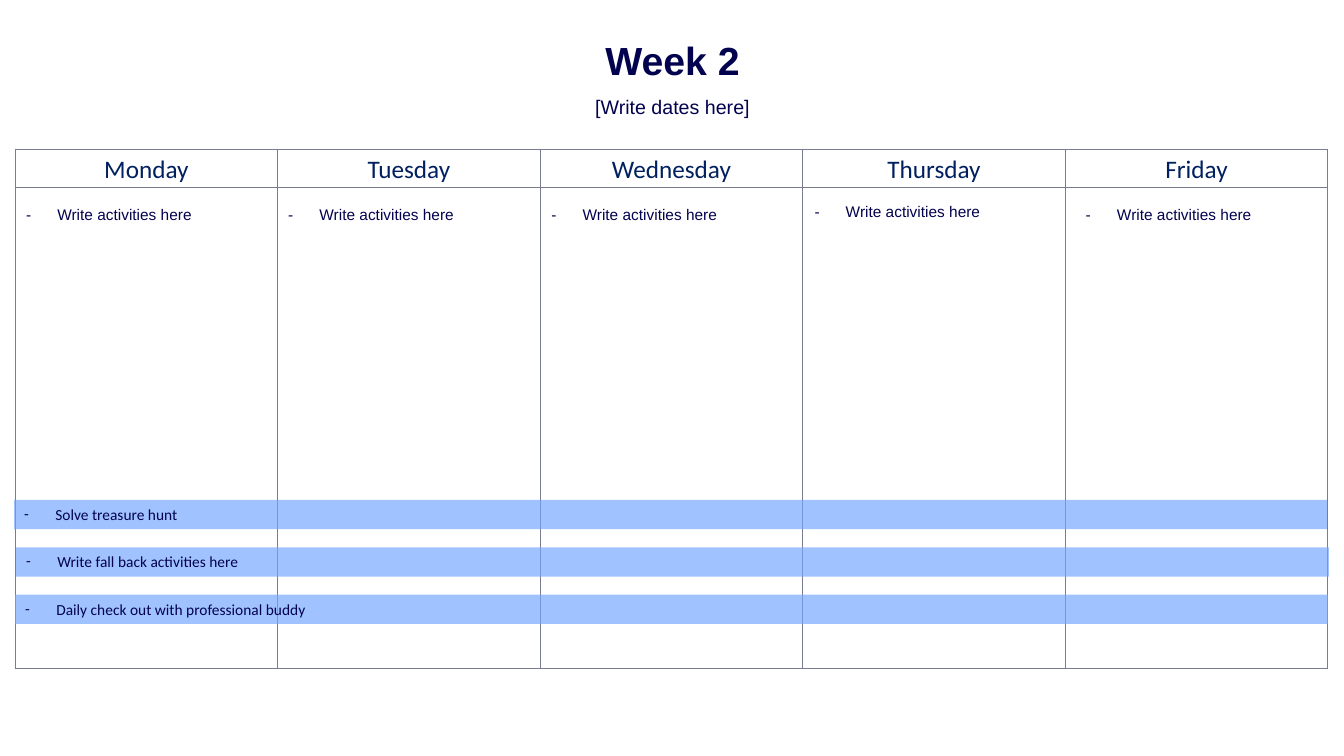
from lxml.etree import SubElement
from pptx import Presentation
from pptx.dml.color import RGBColor
from pptx.enum.shapes import MSO_CONNECTOR, MSO_SHAPE
from pptx.enum.text import MSO_ANCHOR, MSO_AUTO_SIZE, PP_ALIGN
from pptx.oxml.ns import qn
from pptx.util import Inches, Pt

COLORS = {"ink": "03024E", "heading": "002060", "grid": "797C91", "band": "73A6FF"}
DAYS = ["Monday", "Tuesday", "Wednesday", "Thursday", "Friday"]
# Left and top of each day's activity box
ACTIVITY_SPOTS = [(0.16, 1.99), (2.76, 1.99), (5.37, 1.99), (7.98, 1.96), (10.67, 1.99)]
BANDS = [
    ("Solve treasure hunt", 0.14, 4.96),
    ("Write fall back activities here", 0.16, 5.43),
    ("Daily check out with professional buddy", 0.15, 5.9),
]
GRID_LEFT, GRID_TOP, GRID_WIDTH, GRID_HEIGHT = 0.15, 1.48, 13.02, 5.15
HEADER_LINE_TOP = 1.86
ITEM_HEIGHT = 0.29


def rgb(name):
    return RGBColor.from_string(COLORS[name])


def format_runs(paragraph, size, font_name, color, bold=False):
    for run in paragraph.runs:
        run.font.size = Pt(size)
        run.font.name = font_name
        run.font.bold = bold
        run.font.color.rgb = rgb(color)


def add_title(slide):
    title = slide.shapes.title
    title.left, title.top = Inches(0.92), Inches(0.07)
    title.width, title.height = Inches(11.5), Inches(1.16)
    frame = title.text_frame
    frame.text = "Week 2\n[Write dates here]"
    frame.word_wrap = True
    frame.auto_size = MSO_AUTO_SIZE.NONE
    frame.vertical_anchor = MSO_ANCHOR.MIDDLE
    for paragraph, size, bold in zip(frame.paragraphs, (28, 14), (True, False)):
        paragraph.alignment = PP_ALIGN.CENTER
        paragraph.line_spacing = 1.5
        format_runs(paragraph, size, "Arial", "ink", bold)


def add_cell_borders(cell):
    properties = cell._tc.get_or_add_tcPr()
    for side in ("a:lnL", "a:lnR", "a:lnT", "a:lnB"):
        border = SubElement(properties, qn(side), w=str(Pt(1)))
        fill = SubElement(border, qn("a:solidFill"))
        SubElement(fill, qn("a:srgbClr"), val=COLORS["grid"])


def add_week_grid(slide):
    week = slide.shapes.add_table(
        1, len(DAYS), Inches(GRID_LEFT), Inches(GRID_TOP),
        Inches(GRID_WIDTH), Inches(GRID_HEIGHT),
    ).table
    week.first_row = week.horz_banding = False
    for cell, day in zip(week.rows[0].cells, DAYS):
        cell.text_frame.text = day
        heading = cell.text_frame.paragraphs[0]
        heading.alignment = PP_ALIGN.CENTER
        format_runs(heading, 18, "Calibri", "heading")
        add_cell_borders(cell)
        cell.fill.background()


def add_header_line(slide):
    line = slide.shapes.add_connector(
        MSO_CONNECTOR.STRAIGHT, Inches(GRID_LEFT), Inches(HEADER_LINE_TOP),
        Inches(GRID_LEFT + GRID_WIDTH), Inches(HEADER_LINE_TOP),
    )
    line.line.color.rgb = rgb("grid")
    line.line.width = Pt(0.75)
    SubElement(line._element.spPr, qn("a:effectLst"))


def write_dash_item(frame, text, font_name):
    frame.text = text
    frame.word_wrap = True
    frame.auto_size = MSO_AUTO_SIZE.SHAPE_TO_FIT_TEXT
    frame.vertical_anchor = MSO_ANCHOR.TOP
    item = frame.paragraphs[0]
    item.alignment = PP_ALIGN.LEFT
    item.space_before = Pt(12)
    format_runs(item, 11, font_name, "ink")
    properties = item._p.get_or_add_pPr()
    properties.set("marL", str(Inches(0.31)))
    properties.set("indent", str(-Inches(0.31)))
    SubElement(properties, qn("a:buFont"), typeface=font_name)
    SubElement(properties, qn("a:buChar"), char="-")


def add_activity(slide, left, top):
    activity = slide.shapes.add_textbox(
        Inches(left), Inches(top), Inches(2.61), Inches(ITEM_HEIGHT))
    write_dash_item(activity.text_frame, "Write activities here", "Arial")


def add_band(slide, text, left, top):
    """Add a translucent bar for an activity that spans the whole week."""
    band = slide.shapes.add_shape(
        MSO_SHAPE.RECTANGLE, Inches(left), Inches(top),
        Inches(GRID_WIDTH), Inches(ITEM_HEIGHT))
    band.shadow.inherit = False
    band.line.fill.background()
    band.fill.solid()
    band.fill.fore_color.rgb = rgb("band")
    color = band._element.spPr.find(qn("a:solidFill")).find(qn("a:srgbClr"))
    SubElement(color, qn("a:alpha"), val="68000")
    write_dash_item(band.text_frame, text, "Calibri")


def main():
    presentation = Presentation()
    presentation.slide_width = Inches(13.33)
    presentation.slide_height = Inches(7.5)
    slide = presentation.slides.add_slide(presentation.slide_layouts[5])
    add_title(slide)
    add_week_grid(slide)
    add_header_line(slide)
    for left, top in ACTIVITY_SPOTS:
        add_activity(slide, left, top)
    for text, left, top in BANDS:
        add_band(slide, text, left, top)
    presentation.save("out.pptx")


if __name__ == "__main__":
    main()
